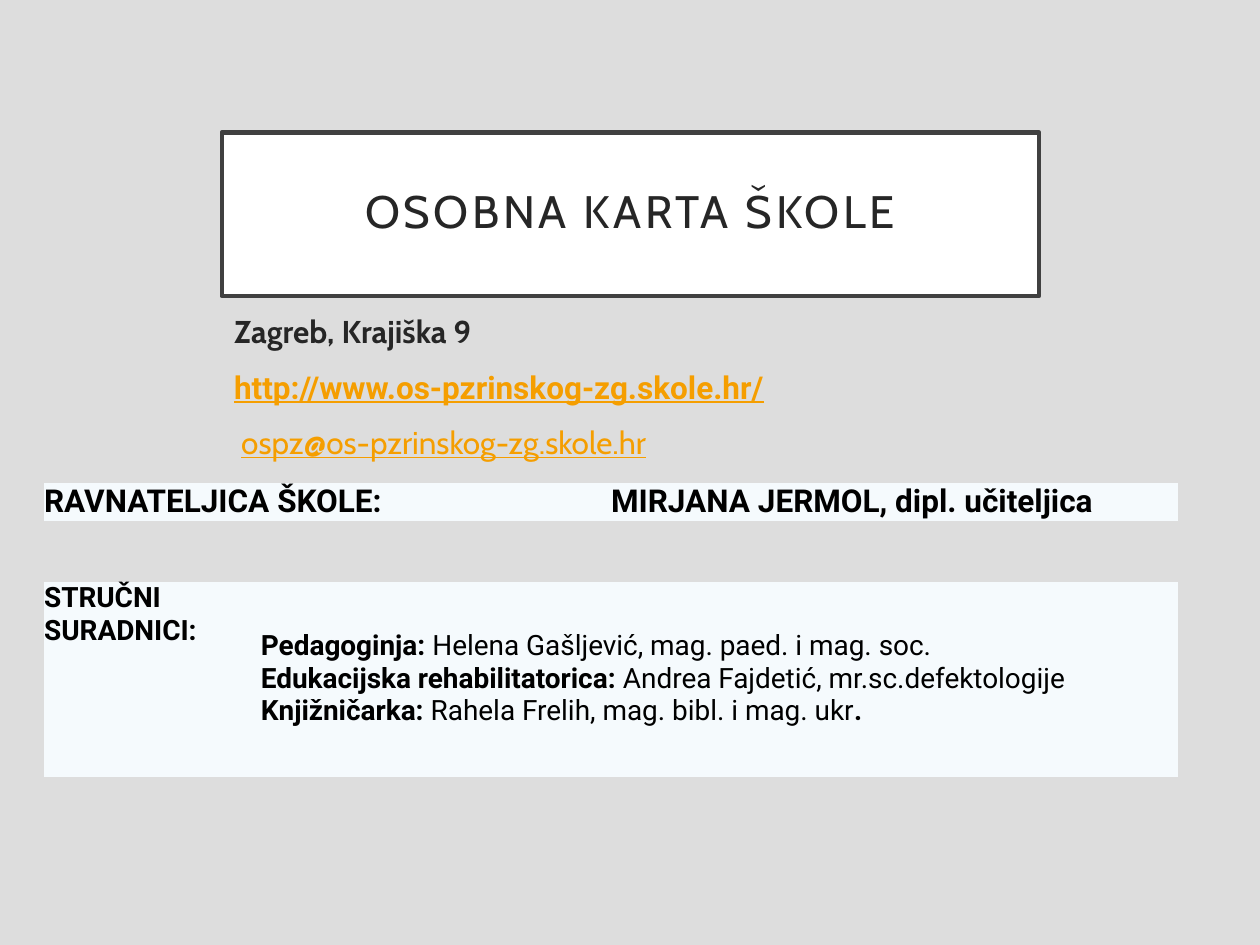
import dataclasses
import pptx
import pptx.util
import pptx.dml.color
import pptx.enum.shapes
import pptx.enum.text
import lxml.etree

Cm = pptx.util.Cm
Pt = pptx.util.Pt
Align = pptx.enum.text.PP_ALIGN
Anchor = pptx.enum.text.MSO_ANCHOR


@dataclasses.dataclass(frozen=True)
class Theme:
    back: str = "DDDDDD"
    white: str = "FFFFFF"
    frame: str = "404040"
    ink: str = "262626"
    black: str = "000000"
    link: str = "F59E00"
    pale: str = "F5FAFD"
    head: str = "Cabin"
    body: str = "Roboto"
    title: int = 26
    large: int = 18
    small: int = 16
    tiny: int = 12
    plain: str = "{2D5ABB26-0587-4C30-8999-92F81FD0307C}"


THEME = Theme()


def color(code):
    return pptx.dml.color.RGBColor.from_string(code)


def paint(fill, code):
    fill.solid()
    fill.fore_color.rgb = color(code)


def write(para, text, font=THEME.body, size=THEME.large, ink=THEME.black,
          bold=False, under=False, track=0):
    run = para.add_run()
    run.text = text
    run.font.name = font
    run.font.size = Pt(size)
    run.font.color.rgb = color(ink)
    run.font.bold = bold
    run.font.underline = under
    if track:
        run.font._element.set("spc", str(track * 100))


def lines(frame, count):
    while len(frame.paragraphs) < count:
        frame.add_paragraph()
    return frame.paragraphs


def title(slide, text):
    box = slide.shapes.add_shape(
        pptx.enum.shapes.MSO_SHAPE.RECTANGLE,
        Cm(4.47), Cm(2.67), Cm(16.48), Cm(3.3))
    box.shadow.inherit = False
    paint(box.fill, THEME.white)
    box.line.color.rgb = color(THEME.frame)
    box.line.width = Pt(2.5)
    frame = box.text_frame
    frame.word_wrap = True
    frame.vertical_anchor = Anchor.MIDDLE
    para = frame.paragraphs[0]
    para.alignment = Align.CENTER
    para.line_spacing = 0.9
    write(para, text, font=THEME.head, size=THEME.title, ink=THEME.ink, track=2)


def contact(slide):
    box = slide.shapes.add_textbox(Cm(4.47), Cm(6.17), Cm(16.48), Cm(8.61))
    frame = box.text_frame
    frame.word_wrap = True
    place, site, mail = lines(frame, 3)
    for para in (site, mail):
        para.space_before = Pt(10)
    write(place, "Zagreb, Krajiška 9", font=THEME.head, ink=THEME.ink, bold=True)
    write(site, "http://www.os-pzrinskog-zg.skole.hr/",
          ink=THEME.link, bold=True, under=True)
    write(mail, " ", font=THEME.head, ink=THEME.ink)
    write(mail, "ospz@os-pzrinskog-zg.skole.hr",
          font=THEME.head, ink=THEME.link, under=True)


def table(slide, top, cols, rows):
    shape = slide.shapes.add_table(
        len(rows), len(cols), Cm(0.89), Cm(top), Cm(sum(cols)), Cm(sum(rows)))
    grid = shape.table
    grid.first_row = False
    grid.horz_banding = False
    grid._tbl.tblPr[0].text = THEME.plain
    for col, width in zip(grid.columns, cols):
        col.width = Cm(width)
    for row, height in zip(grid.rows, rows):
        row.height = Cm(height)
    for cell in grid.iter_cells():
        paint(cell.fill, THEME.pale)
        cell.margin_left = cell.margin_right = 0
        cell.margin_top = cell.margin_bottom = 0
    return grid


def head(slide):
    grid = table(slide, 9.73, [11.43, 11.43], [0.75])
    names = ["RAVNATELJICA ŠKOLE:", "MIRJANA JERMOL, dipl. učiteljica"]
    for cell, name in zip(grid.iter_cells(), names):
        cell.vertical_anchor = Anchor.MIDDLE
        write(cell.text_frame.paragraphs[0], name, bold=True)


def staff(slide):
    grid = table(slide, 11.73, [3.81, 19.05], [3.31, 0.62])
    label, names = grid.cell(0, 0), grid.cell(0, 1)
    write(label.text_frame.paragraphs[0], "STRUČNI SURADNICI:",
          size=THEME.small, bold=True)
    names.margin_left = Cm(0.56)
    names.margin_top = Cm(0.97)
    people = [
        ("Pedagoginja: ", "Helena Gašljević, mag. paed. i mag. soc."),
        ("Edukacijska rehabilitatorica: ", "Andrea Fajdetić, mr.sc.defektologije"),
        ("Knjižničarka: ", "Rahela Frelih, mag. bibl. i mag. ukr"),
    ]
    paras = lines(names.text_frame, len(people))
    for para, (role, name) in zip(paras, people):
        write(para, role, size=THEME.small, bold=True)
        write(para, name, size=THEME.small)
    write(paras[-1], ".", size=THEME.small, bold=True)
    for cell in grid.rows[1].cells:
        para = cell.text_frame.paragraphs[0]
        end = lxml.etree.SubElement(
            para._p, pptx.oxml.ns.qn("a:endParaRPr"))
        end.set("sz", str(THEME.tiny * 100))


def main():
    deck = pptx.Presentation()
    deck.slide_width, deck.slide_height = Cm(25.4), Cm(19.05)
    slide = deck.slides.add_slide(deck.slide_layouts[6])
    paint(slide.background.fill, THEME.back)
    title(slide, "OSOBNA KARTA ŠKOLE")
    contact(slide)
    head(slide)
    staff(slide)
    deck.save("out.pptx")


if __name__ == "__main__":
    main()
